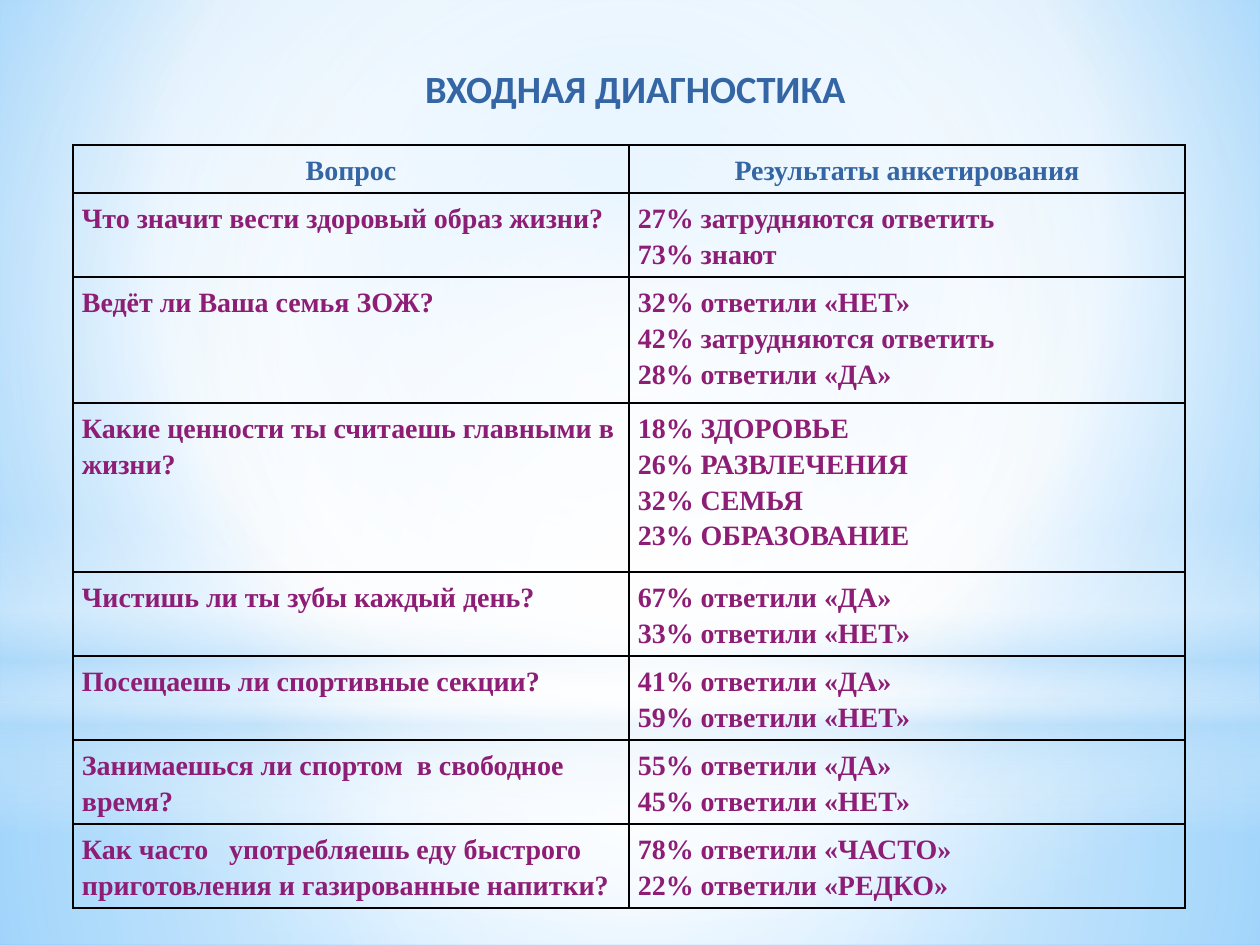
from dataclasses import dataclass
from typing import Optional

from pptx import Presentation
from pptx.dml.color import RGBColor as Rgb
from pptx.enum.shapes import MSO_SHAPE as Preset
from pptx.enum.text import PP_ALIGN as Align
from pptx.oxml import parse_xml
from pptx.oxml.ns import nsdecls, qn
from pptx.util import Emu, Pt

EMU_PER_PX = 914400 / 126
COLORS = {
    "heading": "3465A4",
    "answer": "8D1D75",
    "border": "000000",
    "white": "FFFFFF",
    "pale": "B4DCFA",
    "sky": "9ED5FF",
    "azure": "5BB9FF",
}
BORDER_EMU = Pt(0.96)
CENTER = (50, 50, 50, 50)


@dataclass(frozen=True)
class Stop:
    position: int
    color: str
    opacity: int = 100


@dataclass(frozen=True)
class Glow:
    """A gradient area; without a focus the gradient runs downwards."""
    preset: Preset
    box: tuple[int, int, int, int]
    stops: tuple[Stop, ...]
    focus: Optional[tuple[int, int, int, int]] = CENTER


@dataclass(frozen=True)
class Row:
    height: int
    question: str
    answers: tuple[str, ...]


BACKDROP = (Stop(0, "sky"), Stop(60, "white"), Stop(100, "azure"))
BACKDROP_FOCUS = (20, 10, 20, 60)
GLOWS = (
    Glow(Preset.RECTANGLE, (0, 703, 1260, 242),
         (Stop(0, "white", 91), Stop(37, "white", 76), Stop(100, "pale", 79))),
    Glow(Preset.RECTANGLE, (0, 0, 1260, 703),
         (Stop(0, "white", 89), Stop(48, "white", 62), Stop(100, "pale", 79))),
    Glow(Preset.RECTANGLE, (0, 519, 1260, 315),
         (Stop(0, "white", 0), Stop(29, "white", 30), Stop(45, "pale", 40),
          Stop(55, "white", 26), Stop(65, "pale", 60), Stop(100, "white", 0)),
         focus=None),
    Glow(Preset.OVAL, (0, 221, 1260, 703),
         (Stop(0, "white"), Stop(56, "white", 0))),
)

TITLE = "ВХОДНАЯ ДИАГНОСТИКА"
TITLE_BOX = (207, 59, 857, 58)
TITLE_FORMAT = {"name": "Calibri", "size": Pt(22), "bold": True}
CELL_FORMAT = {"name": "Times New Roman", "size": Pt(16), "bold": True}
TABLE_LEFT, TABLE_TOP, COLUMN_WIDTH = 73, 145, 556
ROWS = (
    Row(48, "Вопрос", ("Результаты анкетирования",)),
    Row(84, "Что значит вести здоровый образ жизни?",
        ("27% затрудняются ответить", "73% знают")),
    Row(126, "Ведёт ли Ваша семья ЗОЖ?",
        ("32% ответили «НЕТ»", "42% затрудняются ответить", "28% ответили «ДА»")),
    Row(169, "Какие ценности ты считаешь главными в жизни?",
        ("18% ЗДОРОВЬЕ", "26% РАЗВЛЕЧЕНИЯ", "32% СЕМЬЯ", "23% ОБРАЗОВАНИЕ")),
    Row(84, "Чистишь ли ты зубы каждый день?",
        ("67% ответили «ДА»", "33% ответили «НЕТ»")),
    Row(84, "Посещаешь ли спортивные секции?",
        ("41% ответили «ДА»", "59% ответили «НЕТ»")),
    Row(84, "Занимаешься ли спортом  в свободное время?",
        ("55% ответили «ДА»", "45% ответили «НЕТ»")),
    Row(84, "Как часто   употребляешь еду быстрого приготовления и газированные напитки?",
        ("78% ответили «ЧАСТО»", "22% ответили «РЕДКО»")),
)


def px(length: int) -> Emu:
    return Emu(round(length * EMU_PER_PX))


def set_gradient(owner, fill, stops: tuple[Stop, ...], focus) -> None:
    """Fill with stops that may be transparent and radiate from a focus."""
    fill.gradient()
    stop_xml = "".join(
        f'<a:gs pos="{stop.position * 1000}"><a:srgbClr val="{COLORS[stop.color]}">'
        f'<a:alpha val="{stop.opacity * 1000}"/></a:srgbClr></a:gs>'
        for stop in stops)
    if focus:
        sides = " ".join(f'{side}="{value * 1000}"' for side, value in zip("ltrb", focus))
        direction = f'<a:path path="circle"><a:fillToRect {sides}/></a:path>'
    else:
        direction = '<a:lin ang="5400000" scaled="0"/>'
    plain = next(owner.iter(qn("a:gradFill")))
    plain.getparent().replace(plain, parse_xml(
        f'<a:gradFill {nsdecls("a")} rotWithShape="1"><a:gsLst>{stop_xml}</a:gsLst>'
        f'{direction}</a:gradFill>'))


def draw_glow(page, glow: Glow) -> None:
    shape = page.shapes.add_shape(glow.preset, *map(px, glow.box))
    shape.shadow.inherit = False
    shape.line.fill.background()
    set_gradient(shape.element.spPr, shape.fill, glow.stops, glow.focus)


def write_para(para, text: str, font_format: dict, color: str) -> None:
    span = para.add_run()
    span.text = text
    for name, value in font_format.items():
        setattr(span.font, name, value)
    span.font.color.rgb = Rgb.from_string(COLORS[color])


def add_borders(cell) -> None:
    properties = cell._tc.get_or_add_tcPr()
    for index, side in enumerate("LRTB"):
        properties.insert(index, parse_xml(
            f'<a:ln{side} {nsdecls("a")} w="{BORDER_EMU}"><a:solidFill>'
            f'<a:srgbClr val="{COLORS["border"]}"/></a:solidFill></a:ln{side}>'))


def fill_cell(cell, lines: tuple[str, ...], is_header: bool) -> None:
    margins = {"margin_left": 9, "margin_right": 9, "margin_top": 6, "margin_bottom": 6}
    for name, value in margins.items():
        setattr(cell, name, px(value))
    cell.fill.background()
    add_borders(cell)
    frame = cell.text_frame
    for index, line in enumerate(lines):
        para = frame.add_paragraph() if index else frame.paragraphs[0]
        para.line_spacing = 1.15
        para.alignment = Align.CENTER if is_header else Align.LEFT
        write_para(para, line, CELL_FORMAT, "heading" if is_header else "answer")


def draw_table(page) -> None:
    height = sum(row.height for row in ROWS)
    table = page.shapes.add_table(
        len(ROWS), 2, px(TABLE_LEFT), px(TABLE_TOP), px(2 * COLUMN_WIDTH), px(height)).table
    table.first_row = table.horz_banding = False
    for column in table.columns:
        column.width = px(COLUMN_WIDTH)
    for index, row in enumerate(ROWS):
        table.rows[index].height = px(row.height)
        for column, lines in enumerate(((row.question,), row.answers)):
            fill_cell(table.cell(index, column), lines, is_header=index == 0)


def draw_title(page) -> None:
    box = page.shapes.add_textbox(*map(px, TITLE_BOX))
    box.text_frame.word_wrap = True
    para = box.text_frame.paragraphs[0]
    para.alignment = Align.CENTER
    write_para(para, TITLE, TITLE_FORMAT, "heading")


def main() -> None:
    deck = Presentation()
    deck.slide_width, deck.slide_height = px(1260), px(945)
    page = deck.slides.add_slide(deck.slide_layouts[6])
    set_gradient(page.element, page.background.fill, BACKDROP, BACKDROP_FOCUS)
    for glow in GLOWS:
        draw_glow(page, glow)
    draw_table(page)
    draw_title(page)
    deck.save("out.pptx")


if __name__ == "__main__":
    main()
